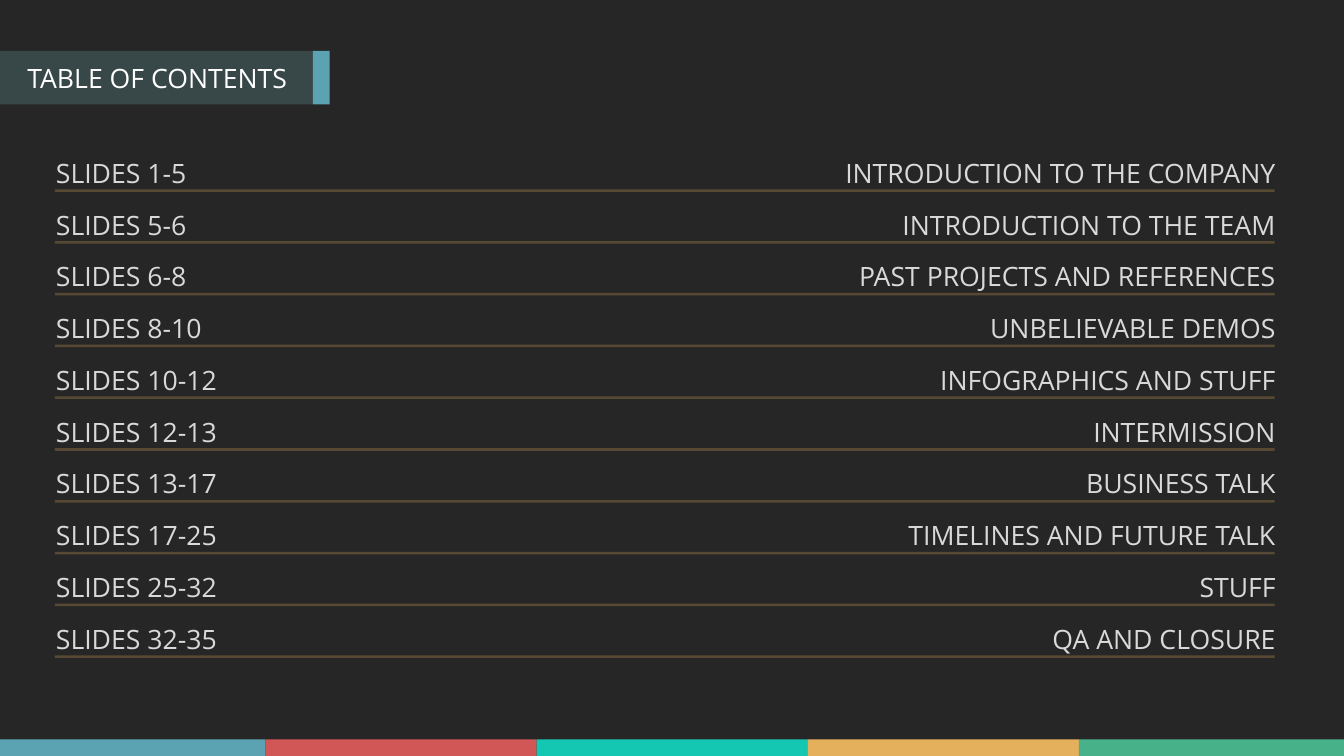
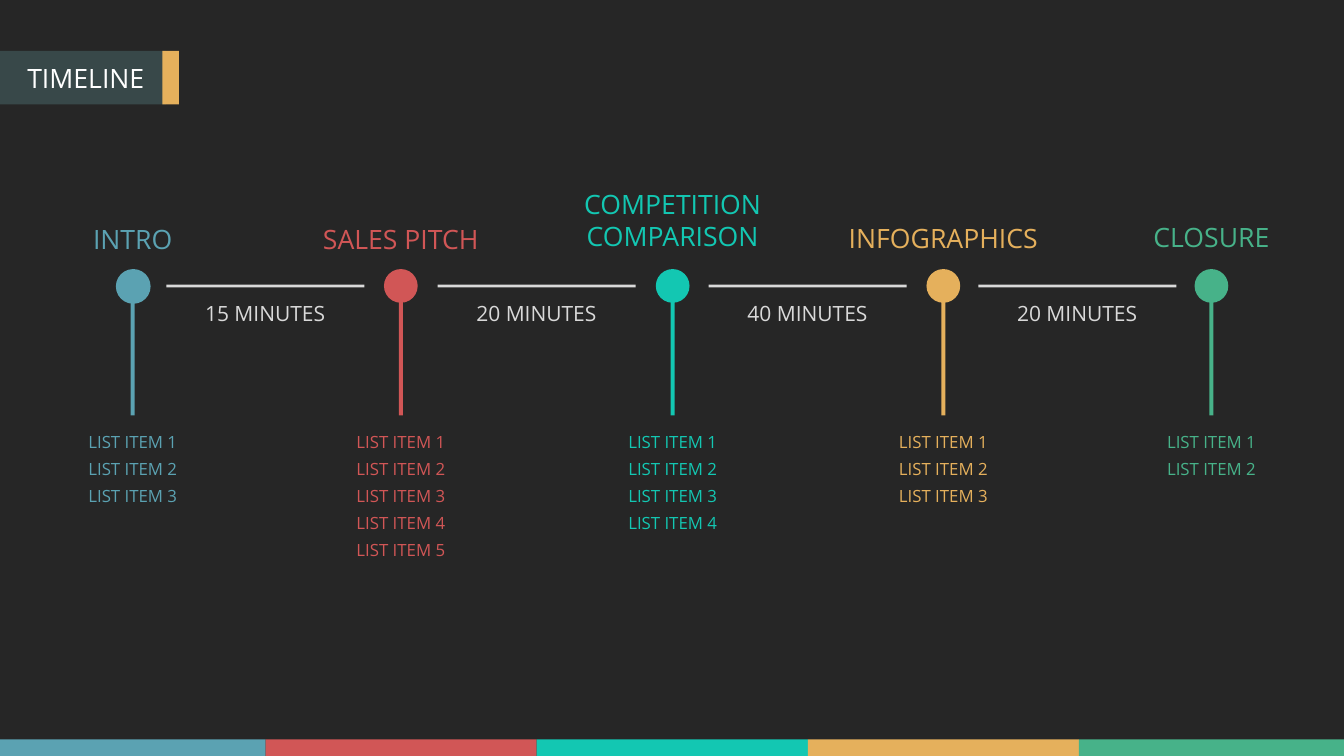
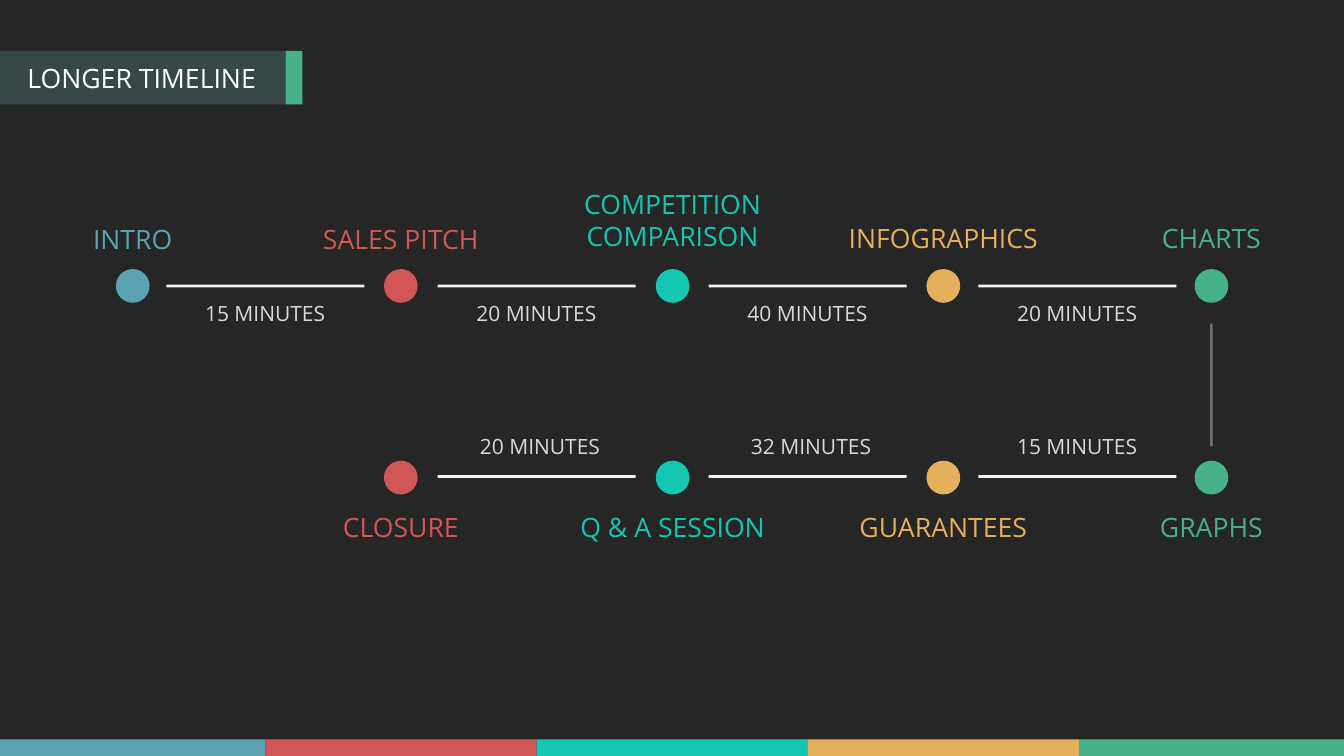
from lxml.etree import SubElement
from pptx import Presentation
from pptx.dml.color import RGBColor
from pptx.enum.shapes import MSO_SHAPE as Kind
from pptx.enum.text import MSO_ANCHOR as Anchor, MSO_AUTO_SIZE as Fit, PP_ALIGN as Align
from pptx.oxml.ns import qn
from pptx.util import Cm, Pt

WIDE, HIGH = 67.73, 38.1
BLUE, RED, TEAL, GOLD, GREEN = HUES = ["5BA2B2", "D15656", "13C7B2", "E5B05C", "47B289"]
DARK, SLATE, WHITE = "262626", "384849", "FFFFFF"
PALE, LIGHT, GREY = "D9D9D9", "F2F2F2", "767171"
FONT = "Open Sans"
BIG, MID, SMALL = 38, 30, 24
LINE = 0.13
STOPS = [6.69, 20.2, 33.9, 47.54, 61.05]  # centres of the timeline dots
GAPS = [13.37, 27.04, 40.7, 54.29]  # centres of the bars between them


def rgb(code):
    return RGBColor.from_string(code)


class Deck:
    """Holds the style and the current slide."""

    def __init__(self):
        self.prs = Presentation()
        self.prs.slide_width, self.prs.slide_height = Cm(WIDE), Cm(HIGH)

    def start(self, title, tab, hue, edge=None):
        """Add a slide with its footer and a title tab ending in a coloured edge."""
        self.slide = self.prs.slides.add_slide(self.prs.slide_layouts[5])
        back = self.slide.background.fill
        back.solid()
        back.fore_color.rgb = rgb(DARK)
        self.foot()
        self.shape(0, 2.57, tab, 2.69, SLATE)
        self.shape(edge or tab, 2.57, 0.84, 2.69, hue)
        head = self.slide.shapes.title
        head.left, head.top = Cm(1.12), Cm(2.97)
        head.width, head.height = Cm(tab - 1.12), Cm(1.88)
        self.letter(head, title, BIG, WHITE, Align.LEFT)
        head.element.getparent().append(head.element)  # in front of the tab

    def foot(self):
        step = 13.66
        ends = [0] + [13.39 + step * n for n in range(4)] + [WIDE]
        for left, right, hue in zip(ends, ends[1:], HUES):
            self.shape(left, 37.26, right - left, 0.84, hue)

    def shape(self, x, y, w, h, hue, kind=Kind.RECTANGLE, alpha=None):
        item = self.slide.shapes.add_shape(kind, Cm(x), Cm(y), Cm(w), Cm(h))
        item.shadow.inherit = False
        item.fill.solid()
        item.fill.fore_color.rgb = rgb(hue)
        item.line.fill.background()
        if alpha:
            tint = item.element.spPr.find(".//" + qn("a:srgbClr"))
            SubElement(tint, qn("a:alpha")).set("val", str(alpha * 1000))

    def text(self, x, y, w, h, words, size, hue, align=Align.CENTER):
        box = self.slide.shapes.add_textbox(Cm(x), Cm(y), Cm(w), Cm(h))
        self.letter(box, words, size, hue, align)

    def letter(self, box, words, size, hue, align):
        """Fill a box with words and format them."""
        frame = box.text_frame
        frame.text = words
        frame.word_wrap = True
        frame.auto_size = Fit.SHAPE_TO_FIT_TEXT
        frame.vertical_anchor = Anchor.TOP
        for para in frame.paragraphs:
            para.alignment = align
            for run in para.runs:
                run.font.name, run.font.size = FONT, Pt(size)
                run.font.color.rgb = rgb(hue)

    def dot(self, mid, y, hue, size=1.7):
        self.shape(mid - 0.85, y, size, size, hue, Kind.OVAL)

    def span(self, mid, y, hue, words, top, shift=0):
        """Draw a bar between two dots and the label that times it."""
        self.shape(mid - 4.99, y, 9.98, LINE, hue)
        self.text(mid + shift - 5.29, top, 10.57, 1.55, words, MID, PALE)

    def head(self, mid, y, words, hue, wide=10.77):
        high = 3.51 if "\n" in words else 1.88
        self.text(mid - wide / 2, y, wide, high, words, BIG, hue)

    def track(self, hue, last, top, first=1.7):
        """Draw the upper row of dots, bars, times and headings."""
        for n, (mid, tint) in enumerate(zip(STOPS, HUES)):
            self.dot(mid, 13.56, tint, 1.7 if n else first)
        for mid, mins in zip(GAPS, [15, 20, 40, 20]):
            self.span(mid, 14.35, hue, f"{mins} MINUTES", 15.04)
        heads = [("INTRO", 11.1), ("SALES PITCH", 11.1), ("COMPETITION\nCOMPARISON", 9.37),
                 ("INFOGRAPHICS", 11.07), (last, top)]
        for mid, tint, (words, y) in zip(STOPS, HUES, heads):
            self.head(mid, y, words, tint, 5.46 if words == "INTRO" else 10.77)


def contents(deck):
    deck.start("TABLE OF CONTENTS", 15.77, BLUE)
    rows = [
        ("1-5", "INTRODUCTION TO THE COMPANY"),
        ("5-6", "INTRODUCTION TO THE TEAM"),
        ("6-8", "PAST PROJECTS AND REFERENCES"),
        ("8-10", "UNBELIEVABLE DEMOS"),
        ("10-12", "INFOGRAPHICS AND STUFF"),
        ("12-13", "INTERMISSION"),
        ("13-17", "BUSINESS TALK"),
        ("17-25", "TIMELINES AND FUTURE TALK"),
        ("25-32", "STUFF"),
        ("32-35", "QA AND CLOSURE"),
    ]
    for n, (pages, topic) in enumerate(rows):
        y = 7.77 + 2.61 * n
        wide = 9.88 if len(pages) > 4 else 8.38
        deck.text(2.57, y, wide, 1.88, f"SLIDES {pages}", BIG, PALE, Align.LEFT)
        deck.shape(2.77, y + 1.77, 61.47, LINE, GOLD, alpha=26)
        deck.text(41.86, y, 22.68, 1.88, topic, BIG, PALE, Align.RIGHT)


def timeline(deck):
    deck.start("TIMELINE", 8.38, GOLD, 8.18)
    deck.track(PALE, "CLOSURE", 11.02, 1.75)
    for mid, hue, count in zip(STOPS, HUES, [3, 5, 4, 3, 2]):
        deck.shape(mid - 0.1, 14.48, 0.2, 6.45, hue)
        for n in range(count):
            deck.text(mid - 4.7, 21.62 + 1.37 * n, 9.4, 1.27, f"LIST ITEM {n + 1}", SMALL, hue)


def longer(deck):
    deck.start("LONGER TIMELINE", 14.4, GREEN)
    deck.track(LIGHT, "CHARTS", 11.07)
    deck.shape(STOPS[-1] - LINE / 2, 16.31, LINE, 6.17, GREY)
    lower = ["CLOSURE", "Q & A SESSION", "GUARANTEES", "GRAPHS"]
    for mid, hue, words in zip(STOPS[1:], HUES[1:], lower):
        deck.dot(mid, 23.22, hue)
        deck.head(mid, 25.63, words, hue)
    for mid, mins, shift in zip(GAPS[1:], [20, 32, 15], [0.18, 0.18, 0]):
        deck.span(mid, 23.95, LIGHT, f"{mins} MINUTES", 21.72, shift)


def main():
    deck = Deck()
    contents(deck)
    timeline(deck)
    longer(deck)
    deck.prs.save("out.pptx")


if __name__ == "__main__":
    main()
